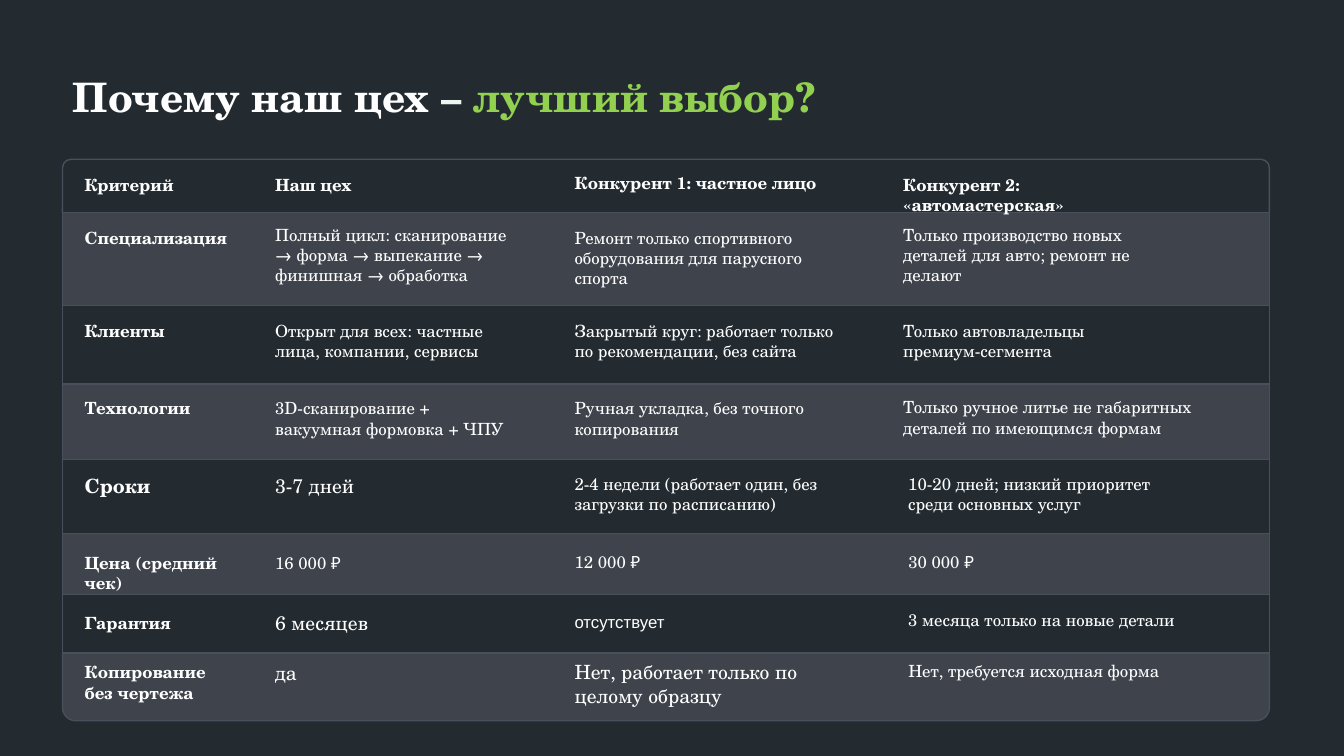
from pptx import Presentation
from pptx.dml.color import RGBColor
from pptx.enum.shapes import MSO_SHAPE
from pptx.enum.text import MSO_ANCHOR, MSO_AUTO_SIZE, PP_ALIGN
from pptx.util import Inches, Pt

HUES = {"dark": "232B31", "band": "3E434C", "edge": "494F5B",
        "white": "FFFFFF", "pale": "F0F4F1", "green": "92D050"}
FACE = "TeX Gyre Schola"


def hue(name):
    return RGBColor.from_string(HUES[name])


def style(run, color, **form):
    for key, value in form.items():
        setattr(run.font, key, value)
    run.font.color.rgb = hue(color)


deck = Presentation()
deck.slide_width, deck.slide_height = Inches(13.33), Inches(7.5)
slide = deck.slides.add_slide(deck.slide_layouts[5])
slide.background.fill.solid()
slide.background.fill.fore_color.rgb = hue("dark")

title = slide.shapes.title
place = {"left": 0.62, "top": 0.5, "width": 11.5, "height": 1.45}
for key, value in place.items():
    setattr(title, key, Inches(value))
frame = title.text_frame
form = {"word_wrap": True, "auto_size": MSO_AUTO_SIZE.NONE,
        "vertical_anchor": MSO_ANCHOR.TOP, "margin_top": Inches(0.27)}
for key, value in form.items():
    setattr(frame, key, value)
line = frame.paragraphs[0]
line.alignment = PP_ALIGN.LEFT
line.line_spacing = 0.9
for text, color in [("Почему наш цех ", "white"), ("– ", "pale"), ("лучший выбор?", "green")]:
    run = line.add_run()
    run.text = text
    style(run, color, name=FACE, size=Pt(29), bold=True)

ROUND, RECT = MSO_SHAPE.ROUNDED_RECTANGLE, MSO_SHAPE.RECTANGLE
bands = [
    (ROUND, 6.37, 0.78, "band"),
    (ROUND, 1.58, 0.61, "dark"),
    (RECT, 2.11, 0.92, "band"),
    (RECT, 3.03, 0.78, "dark"),
    (RECT, 3.81, 0.75, "band"),
    (RECT, 4.56, 0.74, "dark"),
    (RECT, 5.29, 0.61, "band"),
    (RECT, 5.9, 0.58, "dark"),
]
for kind, top, high, color in bands:
    band = slide.shapes.add_shape(kind, Inches(0.62), Inches(top), Inches(11.97), Inches(high))
    band.shadow.inherit = False
    band.fill.solid()
    band.fill.fore_color.rgb = hue(color)
    band.line.color.rgb = hue("edge")
    band.line.width = Pt(1)
    if top == 1.58:
        band.adjustments[0] = 0.14

rows = [
    [("Критерий", 1.68, 3.44, 0.61, 12),
     ("Наш цех", 1.68, 3.44, 0.61, 12),
     ("Конкурент 1: частное лицо", 1.66, 2.69, 0.61, 12),
     ("Конкурент 2: «автомастерская»", 1.68, 2.69, 0.61, 12)],
    [("Специализация", 2.21, 2.4, 0.61, 12),
     ("Полный цикл: сканирование → форма → выпекание → финишная → обработка",
      2.18, 2.69, 1.01, 12),
     ("Ремонт только спортивного оборудования для парусного спорта", 2.21, 3.01, 1.01, 12),
     ("Только производство новых деталей для авто; ремонт не делают", 2.18, 2.59, 1.01, 12)],
    [("Клиенты", 3.13, 1.89, 0.3, 12),
     ("Открыт для всех: частные лица, компании, сервисы", 3.13, 2.5, 0.81, 12),
     ("Закрытый круг: работает только по рекомендации, без сайта", 3.13, 2.87, 0.81, 12),
     ("Только автовладельцы премиум-сегмента", 3.13, 2.45, 0.81, 12)],
    [("Технологии", 3.9, 1.5, 0.61, 12),
     ("3D-сканирование + вакуумная формовка + ЧПУ", 3.9, 2.58, 0.81, 12),
     ("Ручная укладка, без точного копирования", 3.9, 2.96, 0.81, 12),
     ("Только ручное литье не габаритных деталей по имеющимся формам", 3.89, 3.28, 0.81, 12)],
    [("Сроки", 4.65, 1.44, 0.64, 14),
     ("3-7 дней", 4.65, 2.63, 0.64, 14),
     ("2-4 недели (работает один, без загрузки по расписанию)", 4.65, 2.76, 0.81, 12),
     ("10-20 дней; низкий приоритет среди основных услуг", 4.65, 2.76, 0.81, 12)],
    [("Цена (средний чек)", 5.43, 1.82, 0.61, 12),
     ("16 000 ₽", 5.43, 1.82, 0.61, 12),
     ("12 000 ₽", 5.42, 2.92, 0.61, 12),
     ("30 000 ₽", 5.42, 2.19, 0.61, 12)],
    [("Гарантия", 6.03, 1.54, 0.3, 12),
     ("6 месяцев", 6.01, 2.5, 0.64, 14),
     ("отсутствует", 6.02, 2.06, 0.61, 12),
     ("3 месяца только на новые детали", 6, 3.03, 0.61, 12)],
    [("Копирование без чертежа", 6.52, 1.68, 0.81, 12),
     ("да", 6.51, 1.68, 0.34, 14),
     ("Нет, работает только по целому образцу", 6.5, 2.87, 0.88, 14),
     ("Нет, требуется исходная форма", 6.51, 3.22, 0.61, 12)],
]
for index, row in enumerate(rows):
    lefts = [0.74, 2.63, 5.6, 8.86 if index < 4 else 8.91]
    for col, (text, top, wide, high, size) in enumerate(row):
        box = slide.shapes.add_textbox(Inches(lefts[col]), Inches(top), Inches(wide), Inches(high))
        frame = box.text_frame
        frame.word_wrap = True
        frame.auto_size = MSO_AUTO_SIZE.SHAPE_TO_FIT_TEXT
        run = frame.paragraphs[0].add_run()
        run.text = text
        face = "Arial" if text == "отсутствует" else FACE
        style(run, "white", name=face, size=Pt(size), bold=index == 0 or col == 0)

deck.save("out.pptx")
